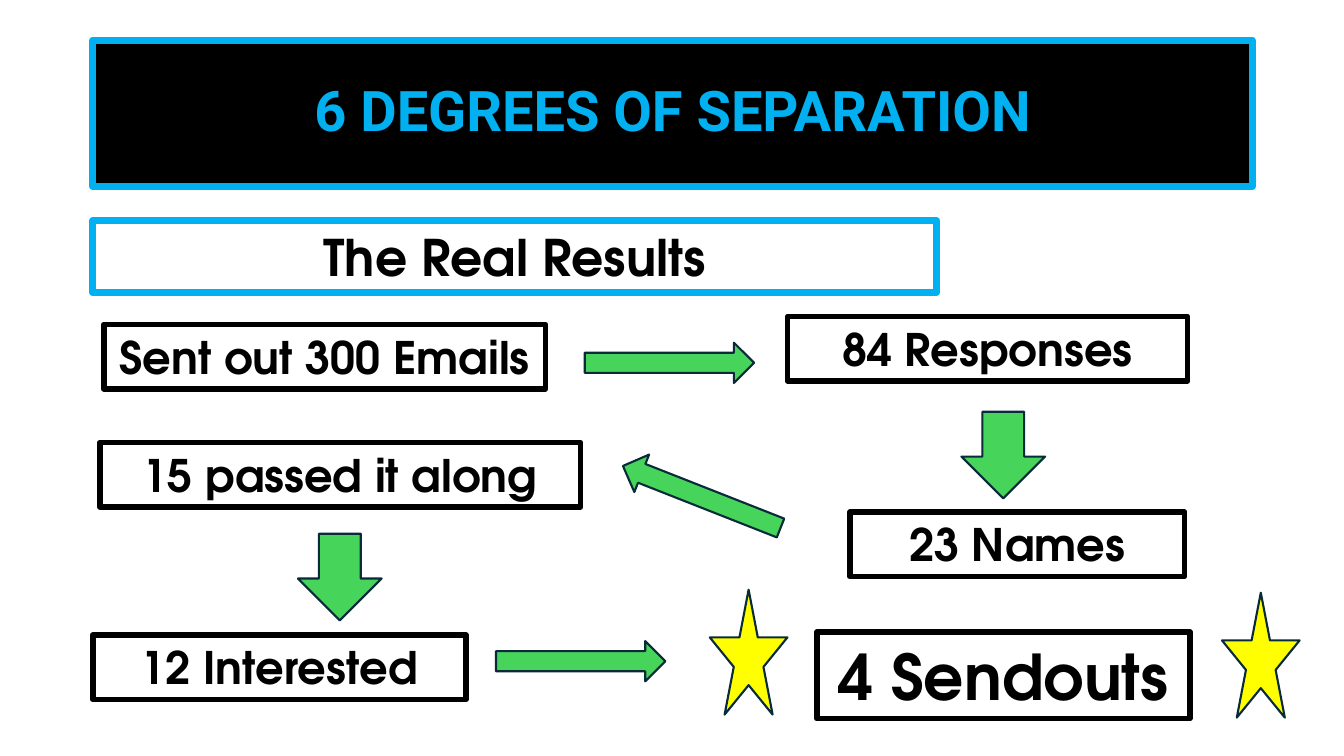
"""Build the slide of results from 300 emails, with sizes in percent of the slide."""
from pptx import Presentation
from pptx.dml.color import RGBColor
from pptx.enum.shapes import MSO_SHAPE
from pptx.enum.text import MSO_ANCHOR, PP_ALIGN
from pptx.util import Inches, Pt

WIDE, HIGH = 13.33, 7.5
BLACK, BLUE, GREEN, YELLOW, EDGE = "000000", "00B0F0", "47D45A", "FFFF00", "092A39"
HEAD, BODY = "Roboto", "TeX Gyre Adventor"
ROW = 8.53
LONG, SHORT, STAR = (12.6, 5.33), (6.45, 11.07), (5.78, 16.53)

STEPS = [
    ("Sent out 300 Emails", 7.73, 42.93, 32.86, ROW, 32),
    ("84 Responses", 58.59, 41.87, 29.78, ROW, 32),
    ("23 Names", 63.24, 67.73, 24.91, ROW, 32),
    ("15 passed it along", 7.43, 58.53, 35.78, ROW, 32),
    ("12 Interested", 6.9, 84, 27.76, ROW, 32),
    ("4 Sendouts", 60.77, 83.6, 27.76, 11.47, 45),
]
ARROWS = [
    (43.51, 45.33, LONG, 0),
    (71.42, 54.67, SHORT, 90),
    (45.91, 63.07, LONG, 201.5),
    (22.06, 70.8, SHORT, 90),
    (36.91, 84.8, LONG, 0),
]
STARS = [(52.81, 78), (90.92, 78.4)]


def color(code):
    """Turn a hex string into a colour."""
    return RGBColor.from_string(code)


def draw(slide, kind, area, fill, line, width):
    """Add a shape over an area given in percent of the slide."""
    left, top, wide, high = area
    shape = slide.shapes.add_shape(
        kind, Inches(WIDE * left / 100), Inches(HIGH * top / 100),
        Inches(WIDE * wide / 100), Inches(HIGH * high / 100))
    shape.shadow.inherit = False
    if fill:
        shape.fill.solid()
        shape.fill.fore_color.rgb = color(fill)
    else:
        shape.fill.background()
    shape.line.color.rgb = color(line)
    shape.line.width = Pt(width)
    return shape


def label(slide, text, area, size, line=BLACK, width=4, fill=None,
          ink=BLACK, face=BODY, anchor=MSO_ANCHOR.TOP):
    """Add a framed box with one bold centred line and return its paragraph."""
    frame = draw(slide, MSO_SHAPE.RECTANGLE, area, fill, line, width).text_frame
    frame.word_wrap = True
    frame.vertical_anchor = anchor
    para = frame.paragraphs[0]
    para.text = text
    para.alignment = PP_ALIGN.CENTER
    font = para.font
    font.name, font.size, font.bold = face, Pt(size), True
    font.color.rgb = color(ink)
    return para


def main():
    """Lay out the headings, steps, arrows and stars."""
    deck = Presentation()
    deck.slide_width, deck.slide_height = Inches(WIDE), Inches(HIGH)
    slide = deck.slides.add_slide(deck.slide_layouts[6])
    title = label(slide, "6 DEGREES OF SEPARATION", (6.9, 5.33, 86.27, 19.33), 40,
                  BLUE, 5, BLACK, BLUE, HEAD, MSO_ANCHOR.MIDDLE)
    title.line_spacing = 0.9
    label(slide, "The Real Results", (6.9, 29.2, 62.79, 9.47), 36, BLUE, 5)
    for text, *area, size in STEPS:
        label(slide, text, area, size)
    for left, top, size, turn in ARROWS:
        arrow = draw(slide, MSO_SHAPE.RIGHT_ARROW, (left, top, *size), GREEN, EDGE, 1.5)
        arrow.rotation = turn
    for spot in STARS:
        draw(slide, MSO_SHAPE.STAR_5_POINT, (*spot, *STAR), YELLOW, EDGE, 1.5)
    deck.save("out.pptx")


if __name__ == "__main__":
    main()
